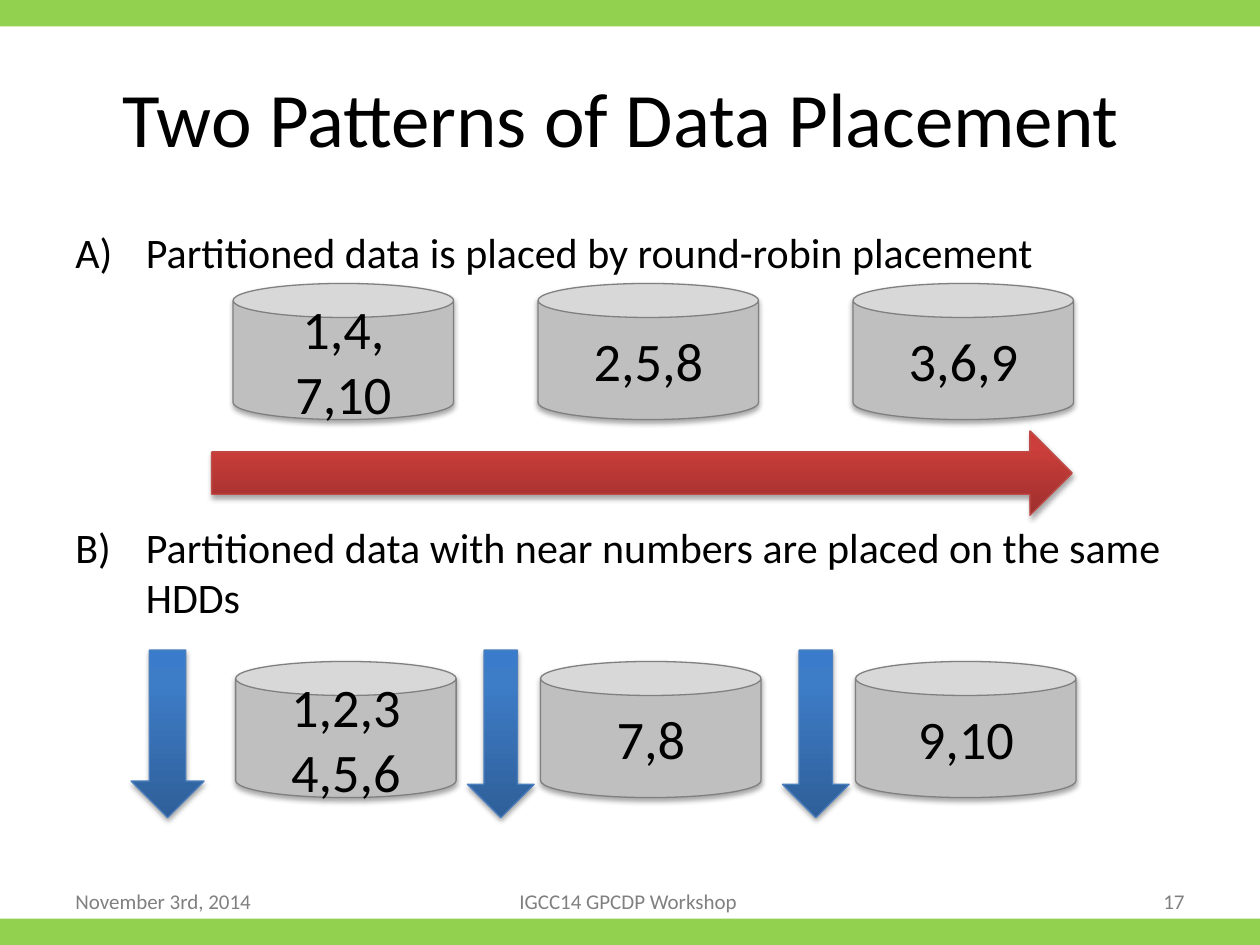
from dataclasses import dataclass

from lxml import etree
from pptx import Presentation
from pptx.dml.color import RGBColor
from pptx.enum.shapes import MSO_SHAPE
from pptx.enum.text import MSO_ANCHOR, PP_ALIGN
from pptx.oxml.ns import qn
from pptx.util import Inches, Pt

RECTANGLE, CAN = MSO_SHAPE.RECTANGLE, MSO_SHAPE.CAN
RIGHT_ARROW, DOWN_ARROW = MSO_SHAPE.RIGHT_ARROW, MSO_SHAPE.DOWN_ARROW
LEFT, CENTER, RIGHT = PP_ALIGN.LEFT, PP_ALIGN.CENTER, PP_ALIGN.RIGHT
TOP, MIDDLE = MSO_ANCHOR.TOP, MSO_ANCHOR.MIDDLE

FONT = "Calibri"
BLACK, GRAY, DISK_FILL, GREEN = "000000", "808080", "BFBFBF", "92D050"
RED_STOPS = ((0, "9C2F2D"), (80, "CB3E3A"), (100, "CE3B37"))
BLUE_STOPS = ((0, "2F5F99"), (80, "3D7CC7"), (100, "3A7CCB"))
RED_LINE, BLUE_LINE = "BF4C48", "4B7EBC"
DISK_OFFSETS = (0, 2.42, 4.92)


@dataclass
class Box:
    left: float
    top: float
    width: float
    height: float

    def lengths(self):
        return [Inches(n) for n in (self.left, self.top, self.width, self.height)]


@dataclass
class DiskRow:
    left: float
    top: float
    labels: tuple


@dataclass
class Label:
    text: str
    box: Box
    size: int
    color: str = BLACK
    align: PP_ALIGN = LEFT
    anchor: MSO_ANCHOR = MIDDLE


@dataclass
class Arrow:
    kind: MSO_SHAPE
    box: Box
    stops: tuple
    line: str


DISK_ROWS = (
    DiskRow(1.85, 2.25, ("1,4,\n7,10", "2,5,8", "3,6,9")),
    DiskRow(1.87, 5.25, ("1,2,3\n4,5,6", "7,8", "9,10")),
)
ARROWS = [Arrow(RIGHT_ARROW, Box(1.68, 3.42, 6.83, 0.67), RED_STOPS, RED_LINE)] + [
    Arrow(DOWN_ARROW, Box(left, 5.16, width, 1.33), BLUE_STOPS, BLUE_LINE)
    for left, width in ((1.04, 0.58), (3.71, 0.53), (6.21, 0.53))
]
LABELS = (
    Label("Two Patterns of Data Placement ", Box(0.5, 0.3, 9, 1.25), 44, align=CENTER),
    Label("November 3rd, 2014", Box(0.5, 6.95, 2.33, 0.4), 12, GRAY),
    Label("IGCC14 GPCDP Workshop ", Box(3.42, 6.95, 3.17, 0.4), 12, GRAY, CENTER),
    Label("17", Box(7.17, 6.95, 2.33, 0.4), 12, GRAY, RIGHT),
)
PATTERNS = (
    Label("Partitioned data is placed by round-robin placement",
          Box(0.5, 1.75, 9, 0.5), 24, anchor=TOP),
    Label("Partitioned data with near numbers are placed on the same HDDs",
          Box(0.5, 4.09, 9, 0.95), 24, anchor=TOP),
)


def rgb(color: str) -> RGBColor:
    return RGBColor.from_string(color)


def style_paragraph(paragraph, size: int, color: str, align: PP_ALIGN) -> None:
    paragraph.alignment = align
    paragraph.font.name = FONT
    paragraph.font.size = Pt(size)
    paragraph.font.color.rgb = rgb(color)


def add_label(slide, label: Label, number: int = 0) -> None:
    """Add a text box, lettered A), B)... when a number is given."""
    frame = slide.shapes.add_textbox(*label.box.lengths()).text_frame
    frame.word_wrap = True
    frame.vertical_anchor = label.anchor
    paragraph = frame.paragraphs[0]
    paragraph.text = label.text
    if number:
        properties = paragraph._p.get_or_add_pPr()
        properties.set("marL", str(Inches(0.56)))
        properties.set("indent", str(-Inches(0.56)))
        etree.SubElement(properties, qn("a:buFont"), typeface="+mj-lt")
        etree.SubElement(properties, qn("a:buAutoNum"),
                         type="alphaUcParenR", startAt=str(number))
    style_paragraph(paragraph, label.size, label.color, label.align)


def add_shadow(shape) -> None:
    shape.shadow.inherit = False
    effects = shape._element.spPr.find(qn("a:effectLst"))
    shadow = etree.SubElement(
        effects, qn("a:outerShdw"), blurRad=str(Pt(3.1)), dist=str(Pt(1.8)),
        dir="5400000", rotWithShape="0")
    color = etree.SubElement(shadow, qn("a:srgbClr"), val=BLACK)
    etree.SubElement(color, qn("a:alpha"), val="35000")


def set_line(shape, color: str) -> None:
    shape.line.color.rgb = rgb(color)
    shape.line.width = Pt(0.75)


def add_bar(slide, top: float) -> None:
    bar = slide.shapes.add_shape(RECTANGLE, *Box(0, top, 10, 0.21).lengths())
    bar.shadow.inherit = False
    bar.fill.solid()
    bar.fill.fore_color.rgb = rgb(GREEN)
    bar.line.fill.background()


def add_disk(slide, box: Box, text: str) -> None:
    disk = slide.shapes.add_shape(CAN, *box.lengths())
    disk.fill.solid()
    disk.fill.fore_color.rgb = rgb(DISK_FILL)
    set_line(disk, GRAY)
    add_shadow(disk)
    disk.text_frame.text = text
    disk.text_frame.vertical_anchor = MIDDLE
    for paragraph in disk.text_frame.paragraphs:
        style_paragraph(paragraph, 31, BLACK, CENTER)


def add_arrow(slide, arrow: Arrow) -> None:
    shape = slide.shapes.add_shape(arrow.kind, *arrow.box.lengths())
    shape.fill.gradient()
    shape.fill.gradient_angle = 90
    stop_list = shape._element.spPr.find(qn("a:gradFill")).find(qn("a:gsLst"))
    for stop in list(stop_list):
        stop_list.remove(stop)
    for percent, color in arrow.stops:
        stop = etree.SubElement(stop_list, qn("a:gs"), pos=str(percent * 1000))
        etree.SubElement(stop, qn("a:srgbClr"), val=color)
    set_line(shape, arrow.line)
    add_shadow(shape)


def main() -> None:
    presentation = Presentation()
    presentation.slide_width, presentation.slide_height = Inches(10), Inches(7.5)
    slide = presentation.slides.add_slide(presentation.slide_layouts[6])
    for top in (0, 7.29):
        add_bar(slide, top)
    for label in LABELS:
        add_label(slide, label)
    for number, pattern in enumerate(PATTERNS, start=1):
        add_label(slide, pattern, number)
    for row in DISK_ROWS:
        for offset, text in zip(DISK_OFFSETS, row.labels):
            add_disk(slide, Box(row.left + offset, row.top, 1.75, 1.08), text)
    for arrow in ARROWS:
        add_arrow(slide, arrow)
    presentation.save("out.pptx")


if __name__ == "__main__":
    main()
